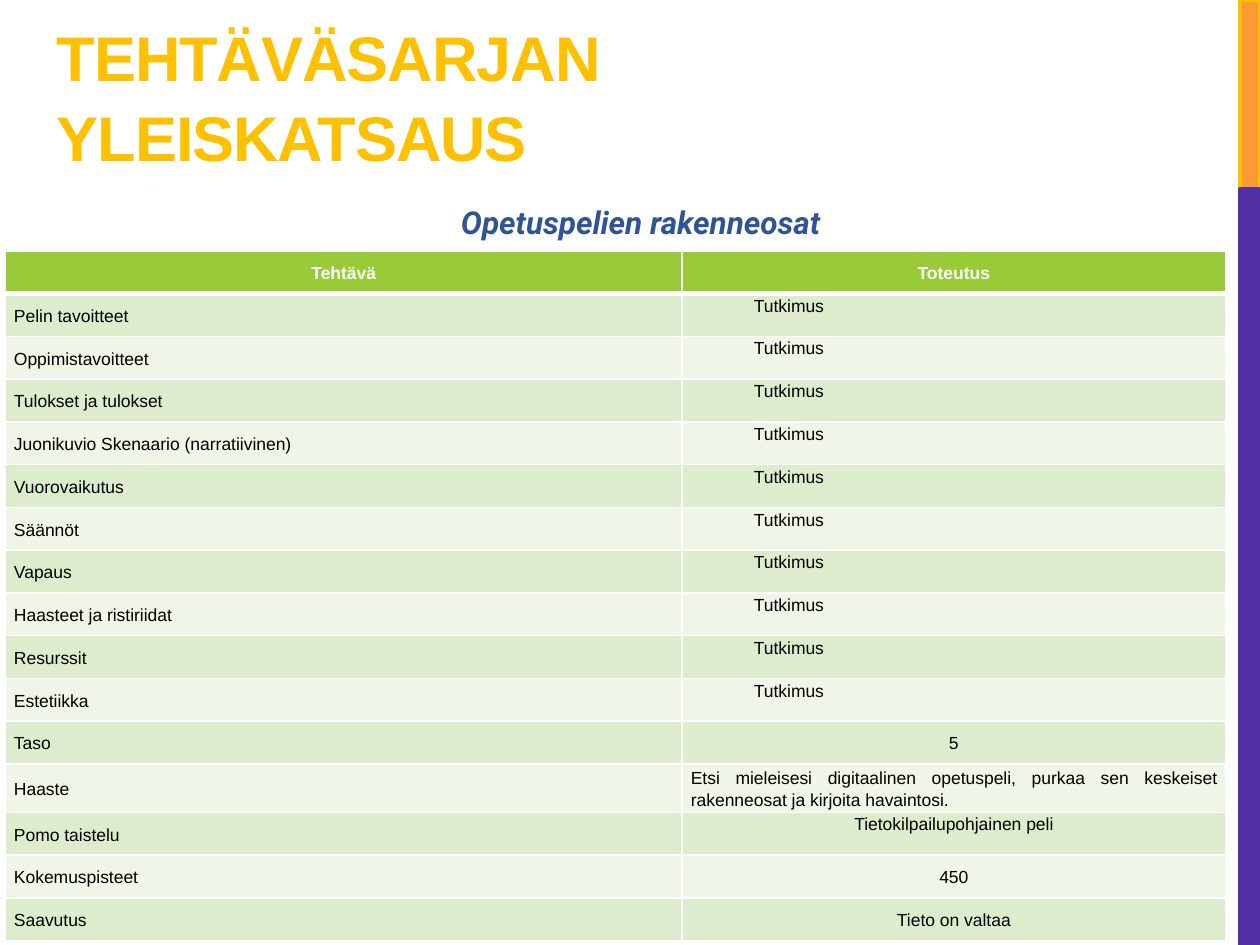
from dataclasses import dataclass

from lxml import etree
from pptx import Presentation
from pptx.dml.color import RGBColor
from pptx.enum import shapes, text
from pptx.oxml.ns import qn
from pptx.util import Pt

COLORS = {
    "gold": "FFC000", "orange": "FF9933", "purple": "5330A5", "blue": "2F5496",
    "header": "99CB38", "band_dark": "DEECCE", "band_light": "EFF6E8",
    "white": "FFFFFF", "black": "000000",
}
LEFT, CENTER, JUSTIFY = text.PP_ALIGN.LEFT, text.PP_ALIGN.CENTER, text.PP_ALIGN.JUSTIFY
TOP, MIDDLE = text.MSO_ANCHOR.TOP, text.MSO_ANCHOR.MIDDLE


@dataclass
class Bar:
    top: float
    height: float
    fill: str
    line: str


@dataclass
class Entry:
    text: str
    align: text.PP_ALIGN = CENTER
    anchor: text.MSO_ANCHOR = MIDDLE
    indent: float = 0


BARS = [Bar(0, 108, "orange", "gold"), Bar(108, 432, "purple", "purple")]
RESEARCHED = [
    "Pelin tavoitteet", "Oppimistavoitteet", "Tulokset ja tulokset",
    "Juonikuvio Skenaario (narratiivinen)", "Vuorovaikutus", "Säännöt", "Vapaus",
    "Haasteet ja ristiriidat", "Resurssit", "Estetiikka",
]
ROWS = [(Entry("Tehtävä"), Entry("Toteutus"))]
ROWS += [(Entry(task, JUSTIFY), Entry("Tutkimus", LEFT, TOP, 36)) for task in RESEARCHED]
ROWS += [
    (Entry("Taso", LEFT), Entry("5")),
    (Entry("Haaste", LEFT), Entry(
        "Etsi mieleisesi digitaalinen opetuspeli, purkaa sen keskeiset "
        "rakenneosat ja kirjoita havaintosi.", JUSTIFY)),
    (Entry("Pomo taistelu", LEFT), Entry("Tietokilpailupohjainen peli", anchor=TOP)),
    (Entry("Kokemuspisteet", LEFT), Entry("450")),
    (Entry("Saavutus", LEFT), Entry("Tieto on valtaa")),
]
CHALLENGE_ROW = 12
COL_WIDTHS = [386.8, 310.5]
ROW_HEIGHT, CHALLENGE_HEIGHT = 24.45, 26.8


def rgb(name: str) -> RGBColor:
    return RGBColor.from_string(COLORS[name])


def set_font(p, name: str, size: float, color: str, bold=False, italic=False) -> None:
    p.font.name, p.font.size = name, Pt(size)
    p.font.bold, p.font.italic = bold, italic
    p.font.color.rgb = rgb(color)


def add_bar(slide, bar: Bar) -> None:
    sp = slide.shapes.add_shape(shapes.MSO_SHAPE.RECTANGLE, Pt(708.5), Pt(bar.top),
                                Pt(11.5), Pt(bar.height))
    sp.shadow.inherit = False
    sp.fill.solid()
    sp.fill.fore_color.rgb = rgb(bar.fill)
    sp.line.color.rgb = rgb(bar.line)
    sp.line.width = Pt(2.25)


def add_title(slide) -> None:
    sp = slide.shapes.title
    sp.left, sp.top, sp.width, sp.height = Pt(25.2), Pt(-5), Pt(455.8), Pt(108)
    tf = sp.text_frame
    tf.text = "TEHTÄVÄSARJAN YLEISKATSAUS"
    tf.word_wrap = True
    tf.auto_size = text.MSO_AUTO_SIZE.NONE
    tf.vertical_anchor = text.MSO_ANCHOR.BOTTOM
    p = tf.paragraphs[0]
    p.alignment = LEFT
    p.line_spacing = 1.05
    set_font(p, "Arial", 36, "gold", bold=True)
    p.runs[0].font._element.set("spc", "-60")


def add_subtitle(slide) -> None:
    sp = slide.shapes.add_textbox(Pt(65.5), Pt(101.5), Pt(601.2), Pt(36.7))
    tf = sp.text_frame
    tf.text = "Opetuspelien rakenneosat"
    tf.word_wrap = True
    tf.auto_size = text.MSO_AUTO_SIZE.SHAPE_TO_FIT_TEXT
    p = tf.paragraphs[0]
    p.alignment = CENTER
    p.line_spacing = 1.5
    p.space_after = Pt(6)
    set_font(p, "Roboto", 18, "blue", bold=True, italic=True)


def add_borders(cell, bottom: float) -> None:
    """White rules on all four sides; they must precede the fill in tcPr."""
    tc_pr = cell._tc.get_or_add_tcPr()
    for side, width in (("lnL", 1), ("lnR", 1), ("lnT", 1), ("lnB", bottom)):
        ln = etree.SubElement(tc_pr, qn(f"a:{side}"), w=str(Pt(width)))
        fill = etree.SubElement(ln, qn("a:solidFill"))
        etree.SubElement(fill, qn("a:srgbClr"), val=COLORS["white"])


def fill_cell(cell, entry: Entry, row: int) -> None:
    header = row == 0
    add_borders(cell, 3 if header else 1)
    cell.fill.solid()
    band = "band_dark" if row % 2 else "band_light"
    cell.fill.fore_color.rgb = rgb("header" if header else band)
    cell.margin_left = cell.margin_right = Pt(5)
    cell.margin_top = cell.margin_bottom = 0
    cell.vertical_anchor = entry.anchor
    cell.text = entry.text
    p = cell.text_frame.paragraphs[0]
    p.alignment = entry.align
    p.line_spacing = 1.15
    p.space_after = Pt(3)
    if entry.indent:
        p._p.get_or_add_pPr().set("marL", str(Pt(entry.indent)))
    set_font(p, "Arial", 10, "white" if header else "black", bold=header)


def add_task_table(slide) -> None:
    heights = [ROW_HEIGHT] * len(ROWS)
    heights[CHALLENGE_ROW] = CHALLENGE_HEIGHT
    table = slide.shapes.add_table(len(ROWS), len(COL_WIDTHS), Pt(3), Pt(143.3),
                                   Pt(sum(COL_WIDTHS)), Pt(sum(heights))).table
    table.horz_banding = False
    for column, width in zip(table.columns, COL_WIDTHS):
        column.width = Pt(width)
    for i, (row, height) in enumerate(zip(table.rows, heights)):
        row.height = Pt(height)
        for cell, entry in zip(row.cells, ROWS[i]):
            fill_cell(cell, entry, i)


def main() -> None:
    prs = Presentation()
    prs.slide_width, prs.slide_height = Pt(720), Pt(540)
    slide = prs.slides.add_slide(prs.slide_layouts[5])
    for bar in BARS:
        add_bar(slide, bar)
    add_title(slide)
    add_subtitle(slide)
    add_task_table(slide)
    prs.save("out.pptx")


if __name__ == "__main__":
    main()
